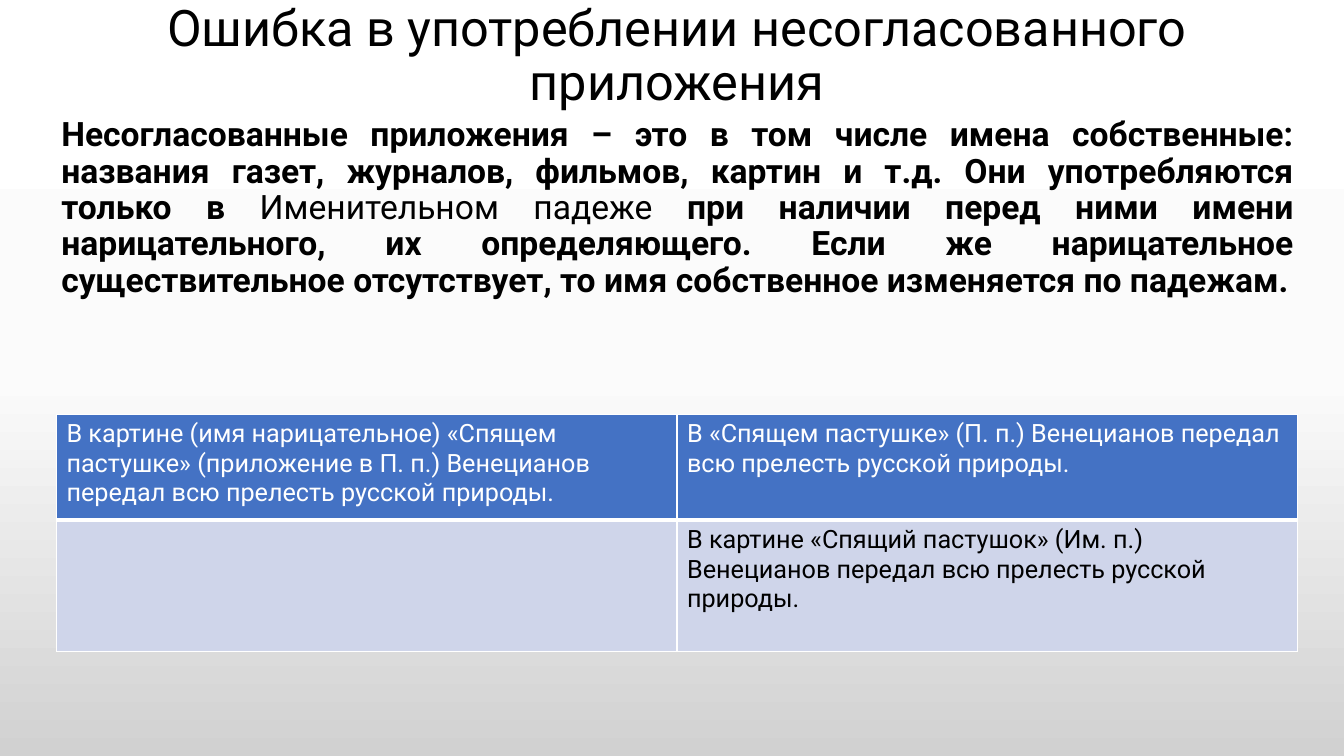
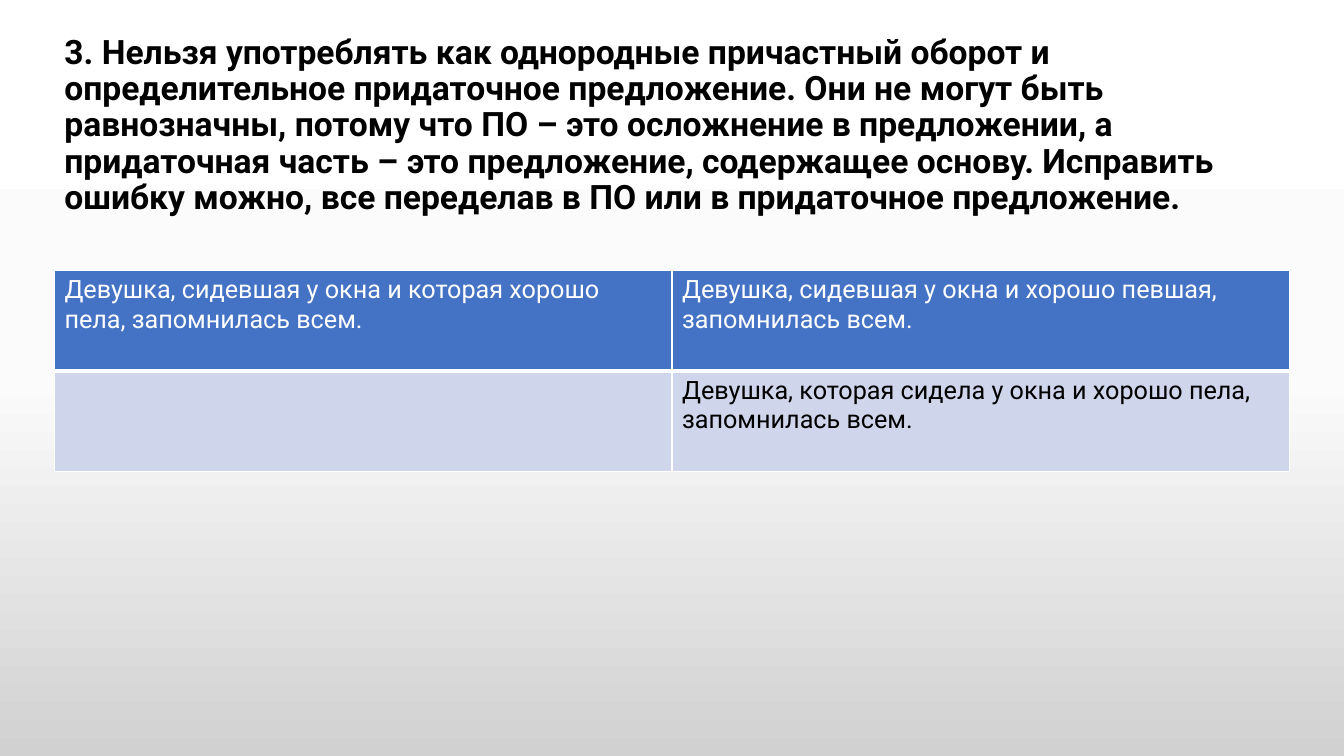
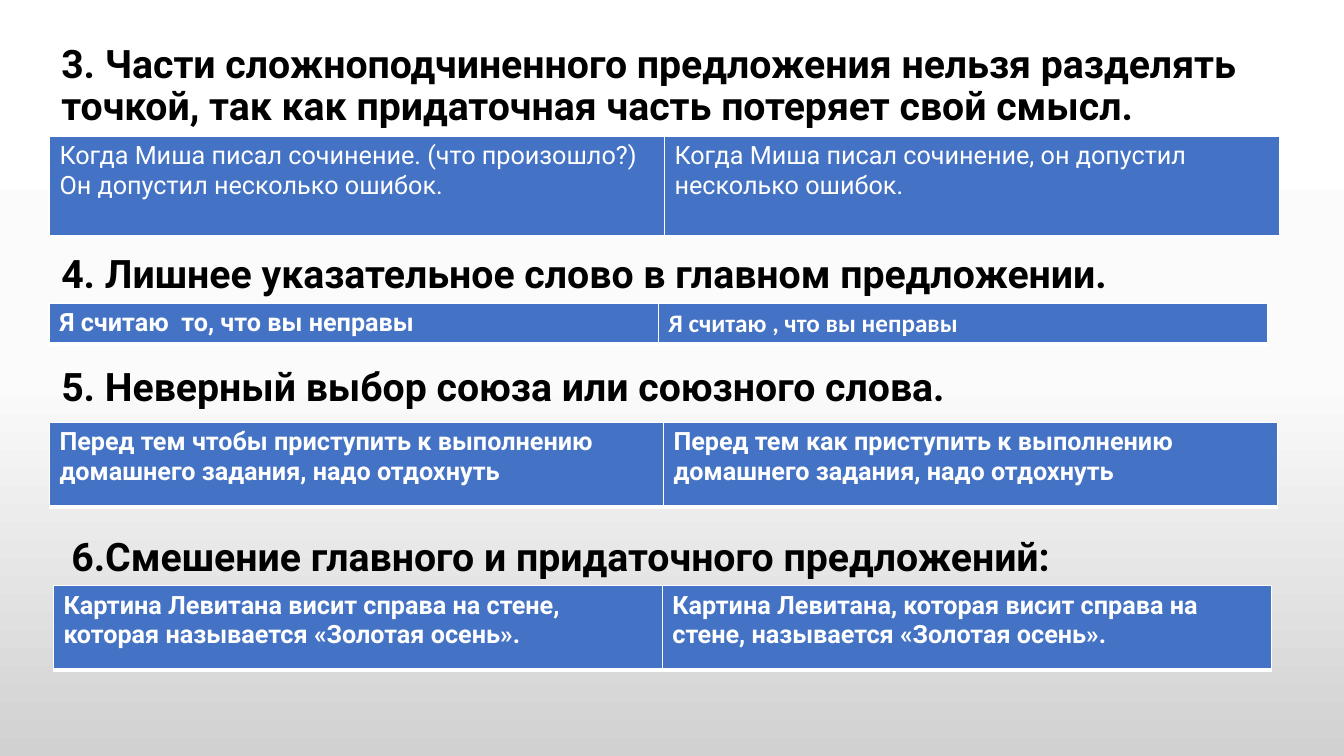
from copy import deepcopy

from lxml import etree
from pptx import Presentation, util as u
from pptx.dml.color import RGBColor
from pptx.enum import text as t
from pptx.oxml import ns

# Shared look
WHITE = RGBColor(0xFF, 0xFF, 0xFF)
NEAR_WHITE = RGBColor(0xFB, 0xFB, 0xFB)
GREY = RGBColor(0xD1, 0xD1, 0xD1)
BLACK = RGBColor(0x00, 0x00, 0x00)
BLUE = RGBColor(0x44, 0x72, 0xC4)
PALE_BLUE = RGBColor(0xCF, 0xD5, 0xEA)
BACKGROUND = [(0, WHITE), (0.5, NEAR_WHITE), (1, GREY)]
FONT, ALT_FONT = "Roboto", "Calibri"
TITLE_SIZE, HEADING_SIZE, BODY_SIZE, CELL_SIZE = 36, 28, 24, 18
LINE_SPACING = 0.9
LEFT, CENTER, JUSTIFY = t.PP_ALIGN.LEFT, t.PP_ALIGN.CENTER, t.PP_ALIGN.JUSTIFY

# Content: a text is a list of (wording, bold) runs; a box is (left, top, width, height)
SLIDES = [
    {
        "title": ((0.56, 0.15, 12.31, 0.94),
                  "Ошибка в употреблении несогласованного приложения"),
        "texts": [
            ((0.51, 1.12, 12.42, 1.95), BODY_SIZE, JUSTIFY, [
                ("Несогласованные приложения – это в том числе имена собственные: "
                 "названия газет, журналов, фильмов, картин и т.д. Они "
                 "употребляются только в ", True),
                ("Именительном падеже", False),
                (" при наличии перед ними имени нарицательного, их "
                 "определяющего. Если же нарицательное существительное "
                 "отсутствует, то имя собственное изменяется по падежам.", True)]),
        ],
        "tables": [
            {"at": (0.56, 4.11), "width": 12.31, "rows": [1.05, 1.3], "cells": [
                ["В картине (имя нарицательное) «Спящем пастушке» (приложение "
                 "в П. п.) Венецианов передал всю прелесть русской природы.",
                 "В «Спящем пастушке» (П. п.) Венецианов передал всю прелесть "
                 "русской природы."],
                ["", "В картине «Спящий пастушок» (Им. п.) Венецианов передал "
                 "всю прелесть русской природы."]]},
        ],
    },
    {
        "texts": [
            ((0.54, 0.3, 12.25, 1.95), BODY_SIZE, LEFT, [
                ("3. Нельзя употреблять как однородные причастный оборот и "
                 "определительное придаточное предложение. Они не могут быть "
                 "равнозначны, потому что ПО – это осложнение в предложении, а "
                 "придаточная часть – это предложение, содержащее основу. "
                 "Исправить ошибку можно, все переделав в ПО или в придаточное "
                 "предложение.", True)]),
        ],
        "tables": [
            {"at": (0.54, 2.68), "width": 12.25, "rows": [1, 1], "cells": [
                ["Девушка, сидевшая у окна и которая хорошо пела, запомнилась всем.",
                 "Девушка, сидевшая у окна и хорошо певшая, запомнилась всем."],
                ["", "Девушка, которая сидела у окна и хорошо пела, "
                 "запомнилась всем."]]},
        ],
    },
    {
        "texts": [
            ((left, top, 12.34, height), HEADING_SIZE, LEFT, [(wording, True)])
            for left, top, height, wording in [
                (0.51, 0.39, 0.93, "3. Части сложноподчиненного предложения нельзя "
                 "разделять точкой, так как придаточная часть потеряет свой смысл."),
                (0.51, 2.48, 0.51, "4. Лишнее указательное слово в главном предложении."),
                (0.51, 3.6, 0.51, "5. Неверный выбор союза или союзного слова."),
                (0.61, 5.28, 0.51, "6.Смешение главного и придаточного предложений:"),
            ]
        ],
        "tables": [
            {"at": (0.49, 1.35), "width": 12.2, "rows": [1], "cells": [
                ["Когда Миша писал сочинение. (что произошло?) Он допустил "
                 "несколько ошибок.",
                 "Когда Миша писал сочинение, он допустил несколько ошибок."]]},
            {"at": (0.49, 3.01), "width": 12.08, "rows": [0.4], "bold": True,
             "fonts": [FONT, ALT_FONT], "cells": [
                ["Я считаю  то, что вы неправы", "Я считаю , что вы неправы"]]},
            {"at": (0.49, 4.19), "width": 12.18, "rows": [0.84], "bold": True, "cells": [
                ["Перед тем чтобы приступить к выполнению домашнего задания, "
                 "надо отдохнуть",
                 "Перед тем как приступить к выполнению домашнего задания, "
                 "надо отдохнуть"]]},
            {"at": (0.53, 5.81), "width": 12.08, "rows": [0.84], "bold": True, "cells": [
                ["Картина Левитана висит справа на стене, которая называется "
                 "«Золотая осень».",
                 "Картина Левитана, которая висит справа на стене, называется "
                 "«Золотая осень»."]]},
        ],
    },
]


def set_background(master):
    """Vertical gradient on the master, inherited by every slide."""
    fill = master.background.fill
    fill.gradient()
    fill.gradient_angle = 270
    last_stop = master.element.xpath(".//p:bg//a:gs")[-1]
    last_stop.addnext(deepcopy(last_stop))
    for stop, (position, color) in zip(fill.gradient_stops, BACKGROUND):
        stop.position = position
        stop.color.rgb = color


def style_font(font, size, color, bold, name=FONT):
    font.name, font.size, font.bold = name, u.Pt(size), bold
    font.color.rgb = color


def add_text(slide, box, size, alignment, runs):
    frame = slide.shapes.add_textbox(*map(u.Inches, box)).text_frame
    frame.word_wrap = True
    paragraph = frame.paragraphs[0]
    paragraph.alignment, paragraph.line_spacing = alignment, LINE_SPACING
    for wording, bold in runs:
        run = paragraph.add_run()
        run.text = wording
        style_font(run.font, size, BLACK, bold)
    return frame


def add_title(slide, box, wording):
    frame = add_text(slide, box, TITLE_SIZE, CENTER, [(wording, False)])
    frame.vertical_anchor = t.MSO_ANCHOR.MIDDLE
    frame.margin_top, frame.margin_bottom = 0, u.Inches(0.1)


def set_borders(cell, bottom_width):
    """White cell borders, placed before the fill as the schema requires."""
    properties = cell._tc.get_or_add_tcPr()
    widths = [("lnL", 1), ("lnR", 1), ("lnT", 1), ("lnB", bottom_width)]
    for index, (tag, width) in enumerate(widths):
        line = etree.Element(ns.qn("a:" + tag), w=str(u.Pt(width)))
        solid = etree.SubElement(line, ns.qn("a:solidFill"))
        etree.SubElement(solid, ns.qn("a:srgbClr"), val=str(WHITE))
        properties.insert(index, line)


def add_table(slide, at, width, rows, cells, bold=False, fonts=(FONT, FONT)):
    columns = len(cells[0])
    box = (*at, width, sum(rows))
    table = slide.shapes.add_table(len(rows), columns, *map(u.Inches, box)).table
    for column in table.columns:
        column.width = u.Inches(width / columns)
    for row_index, (height, wordings) in enumerate(zip(rows, cells)):
        table.rows[row_index].height = u.Inches(height)
        header = row_index == 0
        for column_index, wording in enumerate(wordings):
            cell = table.cell(row_index, column_index)
            cell.fill.solid()
            cell.fill.fore_color.rgb = BLUE if header else PALE_BLUE
            set_borders(cell, 3 if header else 1)
            cell.text_frame.text = wording
            for run in cell.text_frame.paragraphs[0].runs:
                style_font(run.font, CELL_SIZE, WHITE if header else BLACK,
                           bold, fonts[column_index])


def main():
    presentation = Presentation()
    presentation.slide_width = u.Inches(13.33)
    presentation.slide_height = u.Inches(7.5)
    set_background(presentation.slide_master)
    for content in SLIDES:
        slide = presentation.slides.add_slide(presentation.slide_layouts[6])
        if "title" in content:
            add_title(slide, *content["title"])
        for text_block in content["texts"]:
            add_text(slide, *text_block)
        for table in content["tables"]:
            add_table(slide, **table)
    presentation.save("out.pptx")


if __name__ == "__main__":
    main()
